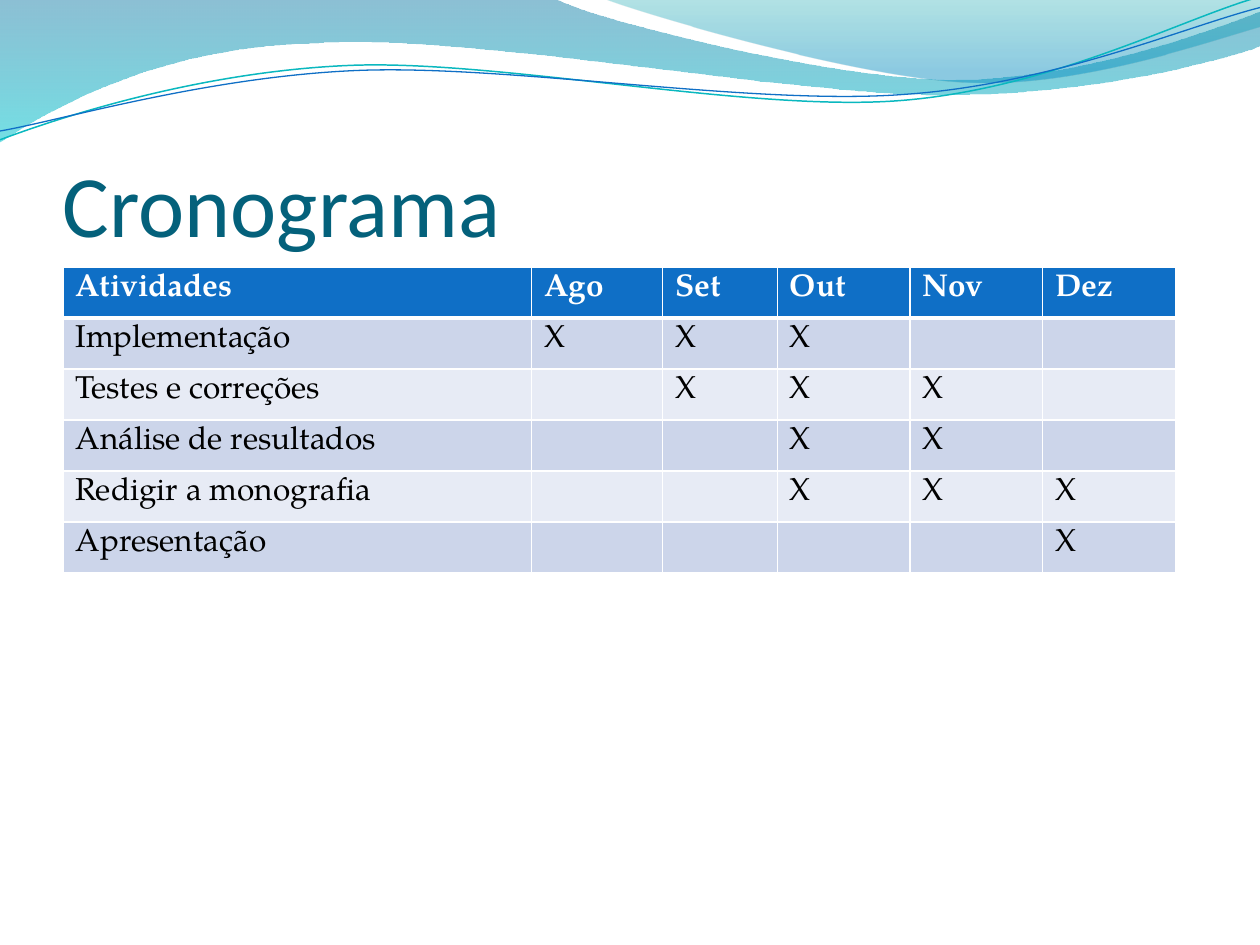
from lxml import etree
from pptx import Presentation
from pptx.dml.color import RGBColor
from pptx.enum.text import MSO_ANCHOR
from pptx.oxml.ns import qn
from pptx.util import Inches, Pt

BOTTOM = MSO_ANCHOR.BOTTOM
WHITE = RGBColor(0xFF, 0xFF, 0xFF)
BLACK = RGBColor(0x00, 0x00, 0x00)
TITLE_TEAL = RGBColor(0x04, 0x61, 0x7B)
BLUE = RGBColor(0x0F, 0x6F, 0xC6)
CYAN = RGBColor(0x0A, 0xB8, 0xBF)
BAND_DARK = RGBColor(0xCC, 0xD5, 0xEA)
BAND_LIGHT = RGBColor(0xE7, 0xEB, 0xF5)
WAVE_BLUE = RGBColor(0x00, 0x74, 0xA1)
WAVE_CYAN = RGBColor(0x00, 0xC6, 0xCF)
CREST_GREEN = RGBColor(0x00, 0xA1, 0xA9)
CREST_BLUE = RGBColor(0x00, 0x8B, 0xBF)
TITLE_FONT, BODY_FONT = "Calibri", "TeX Gyre Pagella"

# Outlines in inches: a start point, then lines (x, y) or Bezier curves (six numbers).
WAVE = [(0, 0), (4.4, -0.01),
        (4.76, 0.17, 6.64, 0.63, 7.58, 0.63), (8.53, 0.63, 9.58, 0.26, 10, 0.09),
        (10.01, 0.36),
        (9.83, 0.44, 8.7, 0.76, 7.46, 0.75), (6.22, 0.75, 3.82, 0.28, 2.57, 0.34),
        (1.29, 0.36, 0.46, 0.83, -0.01, 1.13), (0, 0)]
CREST = [(4.79, -0.01),
         (5.09, 0.11, 6.82, 0.62, 7.69, 0.65), (8.56, 0.69, 9.61, 0.32, 10, 0.21),
         (10, 0), (4.79, -0.01)]
CYAN_STRAND = [(0, 1.11),
               (0.48, 0.93, 1.58, 0.57, 2.77, 0.52), (3.95, 0.47, 5.93, 0.89, 7.13, 0.8),
               (8.33, 0.71, 9.38, 0.15, 9.98, -0.02)]
BLUE_STRAND = [(0, 1.04),
               (0.47, 0.96, 1.64, 0.61, 2.83, 0.56), (4.03, 0.51, 5.97, 0.84, 7.17, 0.75),
               (8.36, 0.67, 9.41, 0.21, 10, 0.06)]

MONTHS = ["Ago", "Set", "Out", "Nov", "Dez"]
ACTIVITIES = [
    ("Implementação", {"Ago", "Set", "Out"}),
    ("Testes e correções", {"Set", "Out", "Nov"}),
    ("Análise de resultados", {"Out", "Nov"}),
    ("Redigir a monografia", {"Out", "Nov", "Dez"}),
    ("Apresentação", {"Dez"}),
]
TABLE_WIDTH, TABLE_HEIGHT = 8.83, 2.43
FIRST_WIDTHS = [3.72, 1.04, 0.91]
LAST_WIDTH = (TABLE_WIDTH - sum(FIRST_WIDTHS)) / 3
COLUMN_WIDTHS = FIRST_WIDTHS + [LAST_WIDTH] * 3


def add_outline(page, outline, close):
    """Draw straight segments through all points, then merge triples into curves."""
    corners = [(Inches(segment[i]), Inches(segment[i + 1]))
               for segment in outline for i in range(0, len(segment), 2)]
    builder = page.shapes.build_freeform(*corners[0])
    builder.add_line_segments(corners[1:], close=close)
    shape = builder.convert_to_shape()
    shape.shadow.inherit = False
    lines = iter(list(shape.element.iter(qn("a:lnTo"))))
    for segment in outline[1:]:
        line = next(lines)
        if len(segment) == 6:
            curve = etree.Element(qn("a:cubicBezTo"))
            line.addprevious(curve)
            for part in (line, next(lines), next(lines)):
                curve.append(part[0])
                part.getparent().remove(part)
    return shape


def add_gradient_area(page, outline, stops):
    """Fill an outline from top to bottom; stops are (position, colour, opacity %)."""
    area = add_outline(page, outline, close=True)
    area.line.fill.background()
    area.fill.gradient()
    area.fill.gradient_angle = 270
    for stop, (position, color, _) in zip(area.fill.gradient_stops, stops):
        stop.position = position
        stop.color.rgb = color
    colors = area.element.spPr.iter(qn("a:srgbClr"))
    for element, (_, _, opacity) in zip(colors, stops):
        etree.SubElement(element, qn("a:alpha"), val=str(opacity * 1000))


def add_strand(page, outline, color, width):
    strand = add_outline(page, outline, close=False)
    strand.fill.background()
    strand.line.color.rgb = color
    strand.line.width = Pt(width)


def write_text(frame, text, *, font, size, color, bold=False):
    span = frame.paragraphs[0].add_run()
    span.text = text
    span.font.name = font
    span.font.size = Pt(size)
    span.font.bold = bold
    span.font.color.rgb = color


def add_title(page, text):
    box = page.shapes.add_textbox(Inches(0.5), Inches(0.77), Inches(9), Inches(1.25))
    frame = box.text_frame
    frame.word_wrap = True
    frame.vertical_anchor = BOTTOM
    frame.margin_left = frame.margin_right = frame.margin_bottom = 0
    frame.margin_top = Inches(0.05)
    write_text(frame, text, font=TITLE_FONT, size=50, color=TITLE_TEAL)


def set_header_borders(cell):
    """White lines, thicker below; the table style draws those of the other rows."""
    properties = cell._tc.get_or_add_tcPr()
    for index, (side, width) in enumerate([("L", 1), ("R", 1), ("T", 1), ("B", 3)]):
        line = etree.Element(qn(f"a:ln{side}"), w=str(Pt(width)))
        fill = etree.SubElement(line, qn("a:solidFill"))
        etree.SubElement(fill, qn("a:srgbClr"), val=str(WHITE))
        properties.insert(index, line)


def add_schedule(page):
    rows = [["Atividades", *MONTHS]]
    for activity, active in ACTIVITIES:
        rows.append([activity, *("X" if month in active else "" for month in MONTHS)])
    table = page.shapes.add_table(
        len(rows), len(COLUMN_WIDTHS), Inches(0.5), Inches(2.12),
        Inches(TABLE_WIDTH), Inches(TABLE_HEIGHT)).table
    for column, width in zip(table.columns, COLUMN_WIDTHS):
        column.width = Inches(width)
    for row_index, row in enumerate(rows):
        header = row_index == 0
        band = BAND_DARK if row_index % 2 else BAND_LIGHT
        for column_index, text in enumerate(row):
            cell = table.cell(row_index, column_index)
            cell.fill.solid()
            cell.fill.fore_color.rgb = BLUE if header else band
            if header:
                set_header_borders(cell)
            if text:
                write_text(cell.text_frame, text, font=BODY_FONT, size=18,
                           color=WHITE if header else BLACK, bold=header)


def main():
    deck = Presentation()
    deck.slide_width, deck.slide_height = Inches(10), Inches(7.5)
    page = deck.slides.add_slide(deck.slide_layouts[6])
    add_gradient_area(page, WAVE, [(0, WAVE_BLUE, 45), (1, WAVE_CYAN, 55)])
    add_gradient_area(page, CREST, [(0, CREST_GREEN, 30), (0.8, CREST_BLUE, 45)])
    add_strand(page, CYAN_STRAND, CYAN, 0.85)
    add_strand(page, BLUE_STRAND, BLUE, 0.75)
    add_title(page, "Cronograma")
    add_schedule(page)
    deck.save("out.pptx")


if __name__ == "__main__":
    main()
